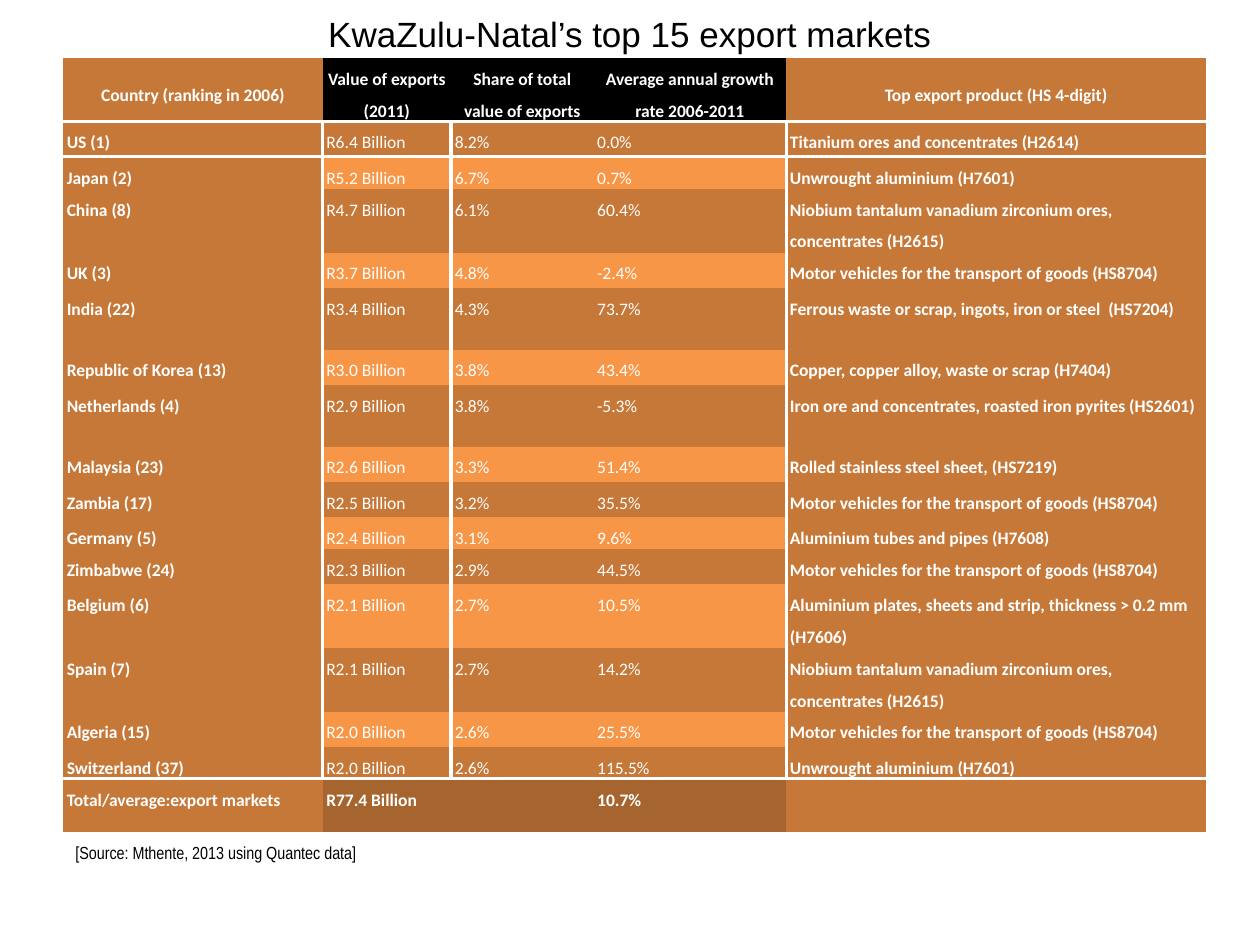
import dataclasses
import typing

import lxml.etree
import pptx
import pptx.dml.color
import pptx.enum.text
import pptx.oxml.ns
import pptx.util

WHITE = pptx.dml.color.RGBColor(0xFF, 0xFF, 0xFF)
BLACK = pptx.dml.color.RGBColor(0x00, 0x00, 0x00)
ORANGE = pptx.dml.color.RGBColor(0xF7, 0x96, 0x46)
COPPER = pptx.dml.color.RGBColor(0xC6, 0x78, 0x38)
BROWN = pptx.dml.color.RGBColor(0xA6, 0x65, 0x2F)

ALIGN = pptx.enum.text.PP_ALIGN
ANCHOR = pptx.enum.text.MSO_ANCHOR
NO_GRID_STYLE = "{2D5ABB26-0587-4C30-8999-92F81FD0307C}"

SLIDE_WIDTH = pptx.util.Inches(10)
SLIDE_HEIGHT = pptx.util.Inches(7.5)
GRID_COLUMNS = 1000
GRID_STEP = SLIDE_WIDTH // GRID_COLUMNS

COLUMN_SPANS = (206, 102, 113, 153, 333)
TIGHT, SINGLE, CLOSING, DOUBLE = 25, 28, 42, 49


@dataclasses.dataclass(frozen=True)
class MarketRow:
    span: int
    country: str
    value: str
    share: str
    growth: str
    product: str

    @property
    def texts(self) -> tuple[str, ...]:
        return self.country, self.value, self.share, self.growth, self.product


@dataclasses.dataclass(frozen=True)
class Caption:
    text: str
    box: tuple[int, int, int, int]
    alignment: typing.Any
    anchor: typing.Any
    font: dict[str, typing.Any]


HEADER = MarketRow(DOUBLE, "Country (ranking in 2006)", "Value of exports (2011)",
                   "Share of total value of exports", "Average annual growth rate 2006-2011",
                   "Top export product (HS 4-digit)")
VEHICLES = "Motor vehicles for the transport of goods (HS8704)"
NIOBIUM = "Niobium tantalum vanadium zirconium ores, concentrates (H2615)"
ALUMINIUM = "Unwrought aluminium (H7601)"
MARKETS = (
    MarketRow(SINGLE, "US (1)", "R6.4 Billion", "8.2%", "0.0%",
              "Titanium ores and concentrates (H2614)"),
    MarketRow(TIGHT, "Japan (2)", "R5.2 Billion", "6.7%", "0.7%", ALUMINIUM),
    MarketRow(DOUBLE, "China (8)", "R4.7 Billion", "6.1%", "60.4%", NIOBIUM),
    MarketRow(SINGLE, "UK (3)", "R3.7 Billion", "4.8%", "-2.4%", VEHICLES),
    MarketRow(DOUBLE, "India (22)", "R3.4 Billion", "4.3%", "73.7%",
              "Ferrous waste or scrap, ingots, iron or steel  (HS7204)"),
    MarketRow(SINGLE, "Republic of Korea (13)", "R3.0 Billion", "3.8%", "43.4%",
              "Copper, copper alloy, waste or scrap (H7404)"),
    MarketRow(DOUBLE, "Netherlands (4)", "R2.9 Billion", "3.8%", "-5.3%",
              "Iron ore and concentrates, roasted iron pyrites (HS2601)"),
    MarketRow(SINGLE, "Malaysia (23)", "R2.6 Billion", "3.3%", "51.4%",
              "Rolled stainless steel sheet, (HS7219)"),
    MarketRow(SINGLE, "Zambia (17)", "R2.5 Billion", "3.2%", "35.5%", VEHICLES),
    MarketRow(TIGHT, "Germany (5)", "R2.4 Billion", "3.1%", "9.6%",
              "Aluminium tubes and pipes (H7608)"),
    MarketRow(SINGLE, "Zimbabwe (24)", "R2.3 Billion", "2.9%", "44.5%", VEHICLES),
    MarketRow(DOUBLE, "Belgium (6)", "R2.1 Billion", "2.7%", "10.5%",
              "Aluminium plates, sheets and strip, thickness > 0.2 mm (H7606)"),
    MarketRow(DOUBLE, "Spain (7)", "R2.1 Billion", "2.7%", "14.2%", NIOBIUM),
    MarketRow(SINGLE, "Algeria (15)", "R2.0 Billion", "2.6%", "25.5%", VEHICLES),
    MarketRow(TIGHT, "Switzerland (37)", "R2.0 Billion", "2.6%", "115.5%", ALUMINIUM),
)
TOTAL = MarketRow(CLOSING, "Total/average:export markets", "R77.4 Billion", "", "10.7%", "")
ROWS = (HEADER, *MARKETS, TOTAL)
LAST_ROW = len(ROWS) - 1
LAST_COLUMN = len(COLUMN_SPANS) - 1

CAPTIONS = (
    Caption("KwaZulu-Natal’s top 15 export markets", (0, 5, 1000, 44), ALIGN.CENTER,
            ANCHOR.TOP, {"name": "Arial", "size": pptx.util.Pt(20)}),
    Caption("[Source: Mthente, 2013 using Quantec data]", (50, 663, 276, 27), ALIGN.JUSTIFY,
            ANCHOR.MIDDLE, {"name": "Arial Narrow", "size": pptx.util.Pt(10)}),
)


def grid(steps: int) -> pptx.util.Emu:
    return pptx.util.Emu(steps * GRID_STEP)


def apply_format(target: typing.Any, values: dict[str, typing.Any]) -> None:
    for attribute, value in values.items():
        setattr(target, attribute, value)


def cell_fill(row: int, column: int) -> pptx.dml.color.RGBColor:
    if column in (0, LAST_COLUMN):
        return COPPER
    if row == 0:
        return BLACK
    if row == LAST_ROW:
        return BROWN
    return COPPER if row % 2 else ORANGE


def cell_borders(row: int, column: int) -> list[str]:
    is_market = 0 < row < LAST_ROW
    sides = {
        "lnL": is_market and column in (1, LAST_COLUMN),
        "lnR": is_market and column in (0, LAST_COLUMN - 1),
        "lnT": row in (1, LAST_ROW),
        "lnB": row in (0, LAST_ROW - 1),
    }
    return [side for side, is_drawn in sides.items() if is_drawn]


def draw_border(cell: typing.Any, side: str) -> None:
    qn = pptx.oxml.ns.qn
    properties = cell._tc.get_or_add_tcPr()
    line = lxml.etree.SubElement(properties, qn(f"a:{side}"), w=str(pptx.util.Pt(2)))
    fill = lxml.etree.SubElement(line, qn("a:solidFill"))
    lxml.etree.SubElement(fill, qn("a:srgbClr"), val=str(WHITE))


def draw_cell(cell: typing.Any, row: int, column: int, text: str) -> None:
    is_header = row == 0
    for side in cell_borders(row, column):
        draw_border(cell, side)
    apply_format(cell, {
        "margin_left": grid(3), "margin_right": grid(3), "margin_top": 0, "margin_bottom": 0,
        "vertical_anchor": ANCHOR.MIDDLE if is_header else ANCHOR.TOP,
    })
    cell.fill.solid()
    cell.fill.fore_color.rgb = cell_fill(row, column)
    paragraph = cell.text_frame.paragraphs[0]
    apply_format(paragraph, {
        "line_spacing": 1.5, "alignment": ALIGN.CENTER if is_header else ALIGN.LEFT,
    })
    if text:
        paragraph.text = text
        font = paragraph.runs[0].font
        apply_format(font, {
            "name": "Calibri", "size": pptx.util.Pt(10),
            "bold": row in (0, LAST_ROW) or column in (0, LAST_COLUMN),
        })
        font.color.rgb = WHITE


def draw_markets(slide: typing.Any) -> None:
    box = (50, 46, sum(COLUMN_SPANS), sum(row.span for row in ROWS))
    markets = slide.shapes.add_table(len(ROWS), len(COLUMN_SPANS), *map(grid, box)).table
    apply_format(markets, {"first_row": False, "horz_banding": False})
    markets._tbl.tblPr.find(pptx.oxml.ns.qn("a:tableStyleId")).text = NO_GRID_STYLE
    for column, span in zip(markets.columns, COLUMN_SPANS):
        column.width = grid(span)
    for row_index, row in enumerate(ROWS):
        markets.rows[row_index].height = grid(row.span)
        for column_index, text in enumerate(row.texts):
            draw_cell(markets.cell(row_index, column_index), row_index, column_index, text)


def draw_caption(slide: typing.Any, caption: Caption) -> None:
    frame = slide.shapes.add_textbox(*map(grid, caption.box)).text_frame
    apply_format(frame, {
        "word_wrap": True, "vertical_anchor": caption.anchor,
        "auto_size": pptx.enum.text.MSO_AUTO_SIZE.SHAPE_TO_FIT_TEXT,
    })
    paragraph = frame.paragraphs[0]
    paragraph.text = caption.text
    paragraph.alignment = caption.alignment
    font = paragraph.runs[0].font
    apply_format(font, caption.font)
    font.color.rgb = BLACK


def main() -> None:
    presentation = pptx.Presentation()
    apply_format(presentation, {"slide_width": SLIDE_WIDTH, "slide_height": SLIDE_HEIGHT})
    slide = presentation.slides.add_slide(presentation.slide_layouts[6])
    draw_markets(slide)
    for caption in CAPTIONS:
        draw_caption(slide, caption)
    presentation.save("out.pptx")


if __name__ == "__main__":
    main()
